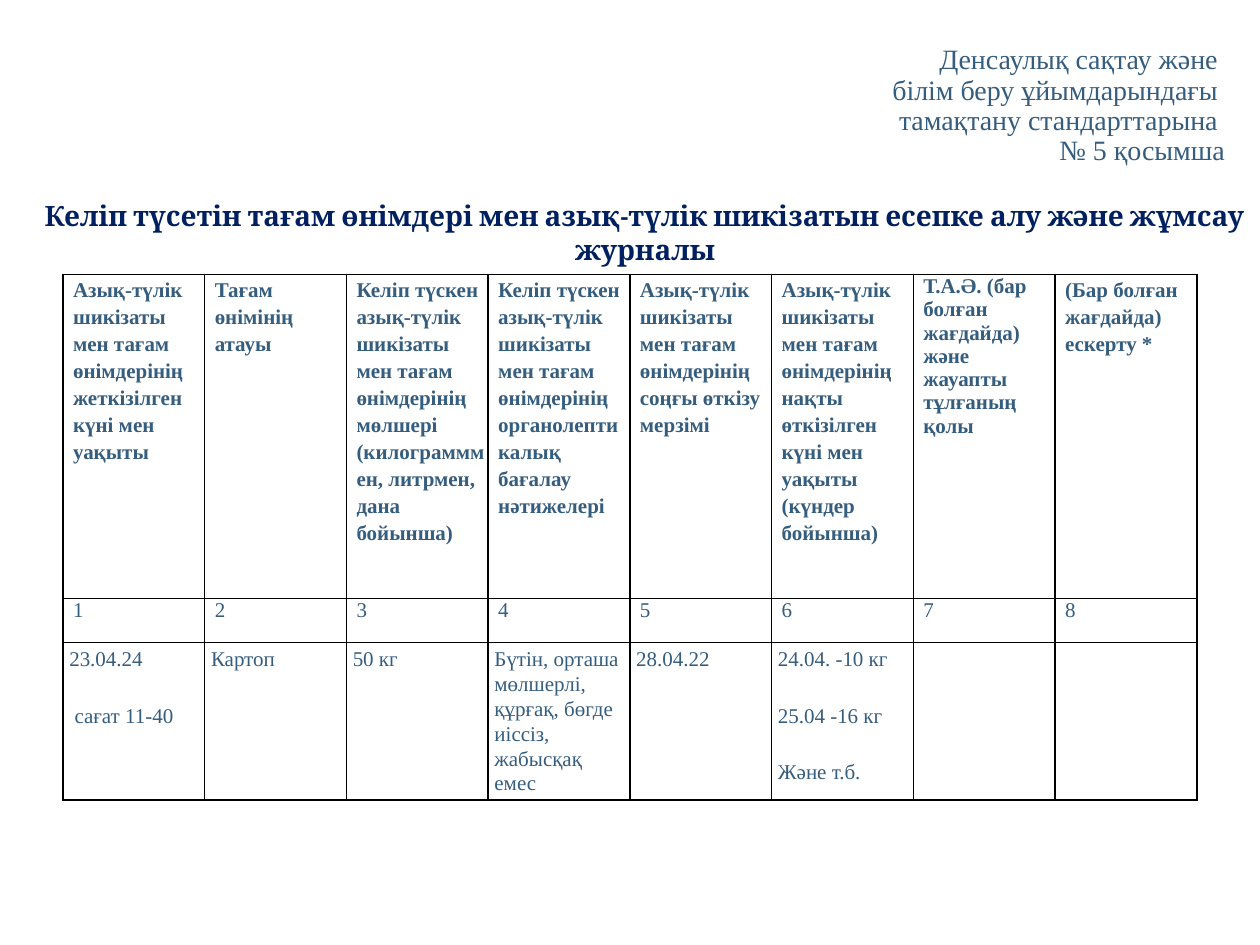
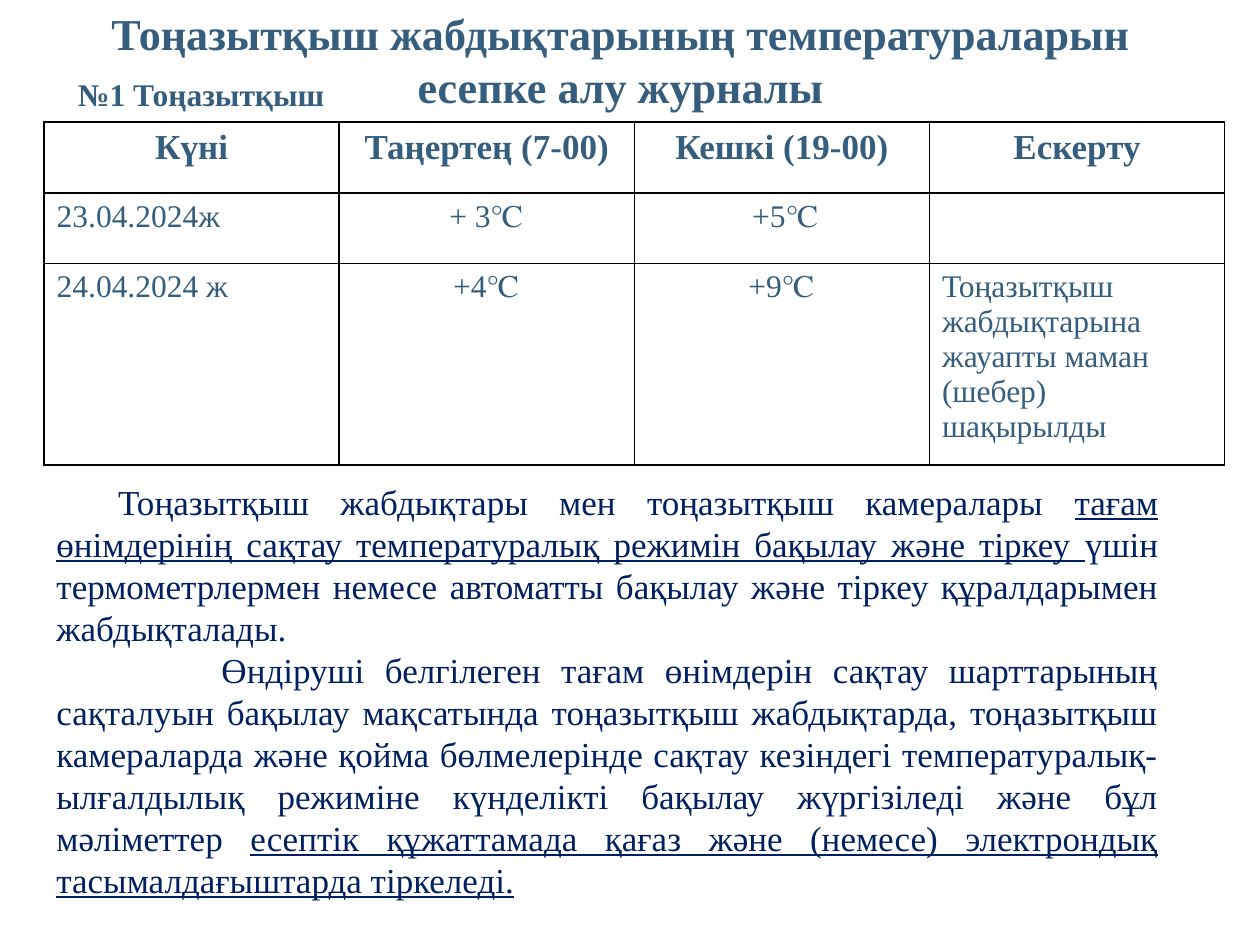
from dataclasses import dataclass, field, replace
from typing import Any

from lxml.etree import SubElement
from pptx import Presentation
from pptx.dml.color import RGBColor
from pptx.enum.text import MSO_ANCHOR as Anchor, PP_ALIGN as Align
from pptx.oxml.ns import qn
from pptx.util import Inches, Pt

STEEL = RGBColor(0x35, 0x5D, 0x7E)
NAVY = RGBColor(0x00, 0x20, 0x60)
INK = "000000"
SERIF = "Times New Roman"
WIDE, HIGH = Inches(10), Inches(7.5)


# The slide is a grid of 100 columns by 100 rows
def col(n: float) -> int:
    return round(WIDE * n / 100)


def row(n: float) -> int:
    return round(HIGH * n / 100)


@dataclass(frozen=True)
class Look:
    size: float
    bold: bool = False
    color: RGBColor = STEEL
    face: str = SERIF
    para: dict[str, Any] = field(default_factory=dict)


@dataclass(frozen=True)
class Para:
    runs: list[str]  # every second run is underlined
    indent: float = 0


@dataclass(frozen=True)
class Box:
    x: float
    y: float
    w: float
    h: float
    paras: list[Para]
    look: Look
    frame: dict[str, Any] = field(default_factory=dict)


@dataclass(frozen=True)
class Cell:
    text: str
    look: Look
    pad: dict[str, Any] = field(default_factory=dict)


@dataclass(frozen=True)
class Grid:
    x: float
    y: float
    w: float
    rows: list[float]
    cells: list[list[Cell]]


def apply(target: Any, values: dict[str, Any]) -> None:
    for name, value in values.items():
        setattr(target, name, value)


def lead(size: float, share: float = 1) -> Pt:
    """Fixed line pitch of 1.2 times the text size."""
    return Pt(size * 1.2 * share)


def write(frame: Any, paras: list[Para], look: Look) -> None:
    for i, item in enumerate(paras):
        para = frame.paragraphs[0] if i == 0 else frame.add_paragraph()
        apply(para, look.para)
        if item.indent:
            para._p.get_or_add_pPr().set("indent", str(col(item.indent)))
        for k, text in enumerate(item.runs):
            run = para.add_run()
            run.text = text
            apply(run.font, {"name": look.face, "size": Pt(look.size),
                             "bold": look.bold, "underline": k % 2 == 1})
            run.font.color.rgb = look.color


def draw_box(slide: Any, box: Box) -> None:
    shape = slide.shapes.add_textbox(col(box.x), row(box.y), col(box.w), row(box.h))
    apply(shape.text_frame, {"word_wrap": True} | box.frame)
    write(shape.text_frame, box.paras, box.look)


def edge(cell: Any) -> None:
    props = cell._tc.get_or_add_tcPr()
    for side in ("lnL", "lnR", "lnT", "lnB"):
        line = SubElement(props, qn(f"a:{side}"), w=str(Pt(1)))
        fill = SubElement(line, qn("a:solidFill"))
        SubElement(fill, qn("a:srgbClr"), val=INK)


def draw_grid(slide: Any, grid: Grid) -> None:
    count = len(grid.cells[0])
    table = slide.shapes.add_table(len(grid.rows), count, col(grid.x), row(grid.y),
                                   col(grid.w), row(sum(grid.rows))).table
    apply(table, {"first_row": False, "horz_banding": False})
    for line in table.columns:
        line.width = col(grid.w / count)
    for r, (high, items) in enumerate(zip(grid.rows, grid.cells)):
        table.rows[r].height = row(high)
        for c, item in enumerate(items):
            cell = table.cell(r, c)
            edge(cell)
            cell.fill.background()
            apply(cell, item.pad)
            if item.text:
                lines = [Para([text]) for text in item.text.split("\n")]
                write(cell.text_frame, lines, item.look)


def cells(texts: list[str], look: Look, pad: dict[str, Any] | None = None) -> list[Cell]:
    return [Cell(text, look, pad or {}) for text in texts]


# Shared styles
MID = {"alignment": Align.CENTER}
TIGHT = {"margin_left": Inches(0.08), "margin_right": 0, "margin_top": 0, "margin_bottom": 0}
SLIM = {"margin_left": Inches(0.05), "margin_right": Inches(0.05),
        "margin_top": Inches(0.03), "margin_bottom": Inches(0.03)}
NUM = Look(12, para={"space_before": Pt(2.5)})
HEAD = Look(12, True, para={"space_before": Pt(2.5), "line_spacing": 1.16})
ENTRY = Look(12, para={"line_spacing": Pt(14.2), "space_after": Pt(18)})
NOTE = Look(18)
MARK = replace(NOTE, para=MID)


# Slide 1: food journal
def food(slide: Any) -> None:
    annex = ["Денсаулық сақтау және ", "білім беру ұйымдарындағы ",
             "тамақтану стандарттарына ", "№ 5 қосымша"]
    draw_box(slide, Box(
        9.1, 2.4, 89.1, 24, [Para([text]) for text in annex],
        Look(16, para={"alignment": Align.RIGHT, "line_spacing": lead(16, 0.9)}),
        {"vertical_anchor": Anchor.MIDDLE, "margin_bottom": Inches(0.53)}))
    heads = cells([
        "Азық-түлік шикізаты мен тағам өнімдерінің жеткізілген күні мен уақыты",
        "Тағам өнімінің атауы",
        "Келіп түскен азық-түлік шикізаты мен тағам өнімдерінің мөлшері "
        "(килограмммен, литрмен, дана бойынша)",
        "Келіп түскен азық-түлік шикізаты мен тағам өнімдерінің "
        "органолептикалық бағалау нәтижелері",
        "Азық-түлік шикізаты мен тағам өнімдерінің соңғы өткізу мерзімі",
        "Азық-түлік шикізаты мен тағам өнімдерінің нақты өткізілген күні мен "
        "уақыты (күндер бойынша)",
        "Т.А.Ә. (бар болған жағдайда) және жауапты тұлғаның қолы",
        "(Бар болған жағдайда) ескерту *"], HEAD, TIGHT)
    heads[6] = replace(heads[6], look=replace(NUM, bold=True))
    stock = cells([
        "23.04.24\n сағат 11-40", "Картоп", "50 кг",
        "Бүтін, орташа мөлшерлі, құрғақ, бөгде иіссіз, жабысқақ емес",
        "28.04.22", "24.04. -10 кг\n25.04 -16 кг\nЖәне т.б.", "", ""], ENTRY, SLIM)
    nums = cells([str(n) for n in range(1, 9)], NUM, TIGHT)
    draw_grid(slide, Grid(5, 29.07, 90, [34.27, 4.67, 16.67], [heads, nums, stock]))
    draw_box(slide, Box(
        2.4, 20.4, 97.6, 8.53,
        [Para(["Келіп түсетін тағам өнімдері мен азық-түлік шикізатын "
               "есепке алу және жұмсау журналы"])],
        Look(16, True, NAVY, "Cambria", MID | {"line_spacing": lead(16)})))


# Slide 2: fridge journal
def fridge(slide: Any) -> None:
    draw_box(slide, Box(
        3.5, 0, 91.5, 12.53,
        [Para(["Тоңазытқыш жабдықтарының температураларын есепке алу журналы"])],
        Look(25.2, True, para=MID | {"line_spacing": lead(25.2)}),
        {"vertical_anchor": Anchor.MIDDLE}))
    heads = cells(["Күні", "Таңертең (7-00)", "Кешкі (19-00)", "Ескерту"],
                  Look(20, True, para=MID))
    days = [("23.04.2024ж", "+ 3℃", " +5℃", ""),
            ("24.04.2024 ж", "+4℃", "+9℃",
             "Тоңазытқыш жабдықтарына жауапты маман (шебер) шақырылды")]
    logs = [[Cell(day, NOTE), *cells([dawn, dusk], MARK), Cell(note, NOTE)]
            for day, dawn, dusk, note in days]
    draw_grid(slide, Grid(3.5, 12.93, 93.7, [7.47, 7.47, 19.73], [heads, *logs]))
    draw_box(slide, Box(5.2, 7.33, 50, 5.33, [Para(["№1 Тоңазытқыш"])], Look(18, True)))
    rules = [
        Para(["Тоңазытқыш жабдықтары мен тоңазытқыш камералары ",
              "тағам өнімдерінің сақтау температуралық режимін бақылау және тіркеу ",
              "үшін термометрлермен немесе автоматты бақылау және тіркеу "
              "құралдарымен жабдықталады."], 4.9),
        Para(["Өндіруші белгілеген тағам өнімдерін сақтау шарттарының сақталуын "
              "бақылау мақсатында тоңазытқыш жабдықтарда, тоңазытқыш камераларда "
              "және қойма бөлмелерінде сақтау кезіндегі температуралық-ылғалдылық "
              "режиміне күнделікті бақылау жүргізіледі және бұл мәліметтер ",
              "есептік құжаттамада қағаз және (немесе) электрондық "
              "тасымалдағыштарда тіркеледі."], 13.1)]
    draw_box(slide, Box(
        3.5, 46.13, 89.4, 50.27, rules,
        Look(20, color=NAVY, para={"alignment": Align.JUSTIFY, "line_spacing": lead(20)}),
        {"margin_top": Inches(0.35)}))


def main() -> None:
    deck = Presentation()
    apply(deck, {"slide_width": WIDE, "slide_height": HIGH})
    for build in (food, fridge):
        build(deck.slides.add_slide(deck.slide_layouts[6]))
    deck.save("out.pptx")


if __name__ == "__main__":
    main()
